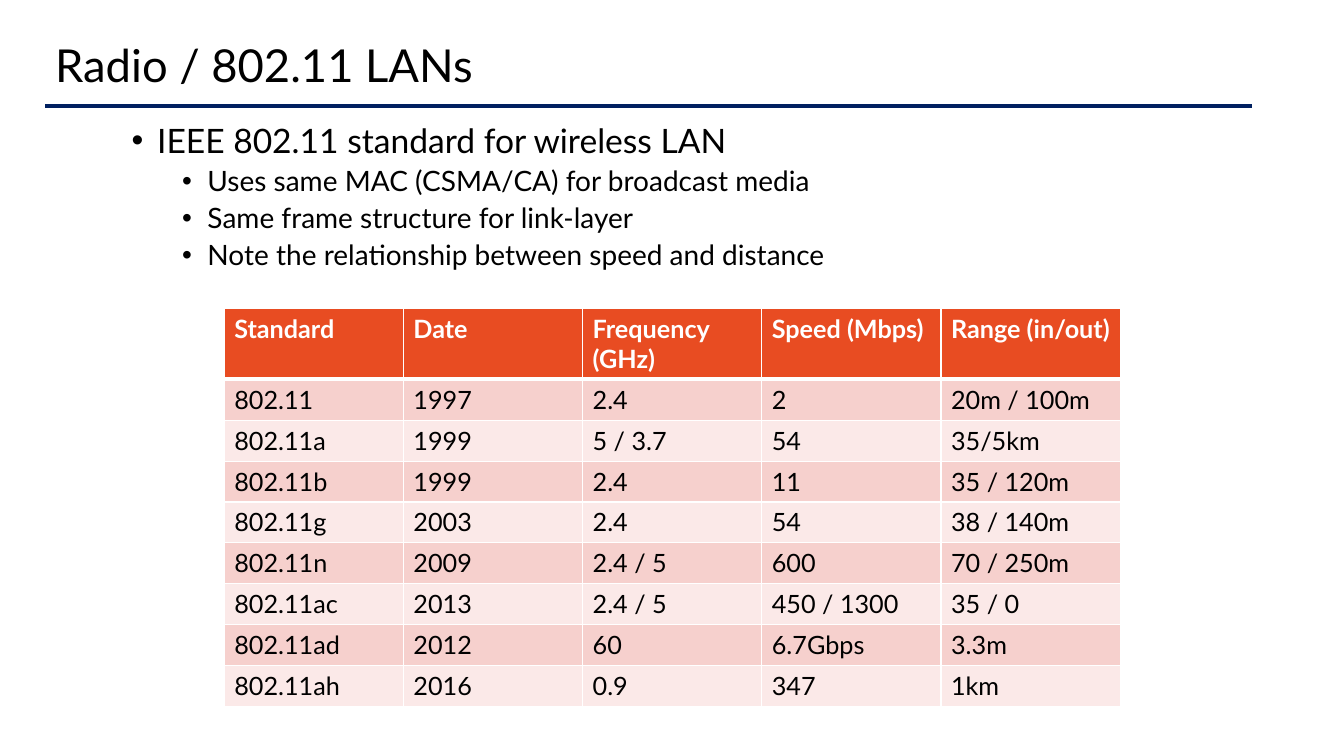
from lxml import etree
from pptx import Presentation
from pptx.dml.color import RGBColor
from pptx.enum.shapes import MSO_CONNECTOR
from pptx.enum.text import MSO_ANCHOR
from pptx.oxml.ns import qn
from pptx.util import Cm, Pt

STRAIGHT = MSO_CONNECTOR.STRAIGHT
MIDDLE = MSO_ANCHOR.MIDDLE
TOP = MSO_ANCHOR.TOP

COLORS = {
    "text": "000000",
    "rule": "002060",
    "header": "E84C22",
    "odd_row": "F6D0CD",
    "even_row": "FBE9E8",
    "white": "FFFFFF",
}

POINTS = [
    (0, "IEEE 802.11 standard for wireless LAN"),
    (1, "Uses same MAC (CSMA/CA) for broadcast media"),
    (1, "Same frame structure for link-layer"),
    (1, "Note the relationship between speed and distance"),
]

STANDARDS = [
    ("Standard", "Date", "Frequency (GHz)", "Speed (Mbps)", "Range (in/out)"),
    ("802.11", "1997", "2.4", "2", "20m / 100m"),
    ("802.11a", "1999", "5 / 3.7", "54", "35/5km"),
    ("802.11b", "1999", "2.4", "11", "35 / 120m"),
    ("802.11g", "2003", "2.4", "54", "38 / 140m"),
    ("802.11n", "2009", "2.4 / 5", "600", "70 / 250m"),
    ("802.11ac", "2013", "2.4 / 5", "450 / 1300", "35 / 0"),
    ("802.11ad", "2012", "60", "6.7Gbps", "3.3m"),
    ("802.11ah", "2016", "0.9", "347", "1km"),
]


class SlideBuilder:
    """Draws styled elements on the current slide."""

    def __init__(self, slide, font, colors):
        self.slide = slide
        self.font = font
        self.colors = colors

    def color(self, name):
        return RGBColor.from_string(self.colors[name])

    def style(self, paragraph, size, color="text", bold=False):
        for run in paragraph.runs:
            run.font.name = self.font
            run.font.size = Pt(size)
            run.font.bold = bold
            run.font.color.rgb = self.color(color)

    def text_frame(self, left, top, width, height, anchor):
        box = self.slide.shapes.add_textbox(Cm(left), Cm(top), Cm(width), Cm(height))
        frame = box.text_frame
        frame.word_wrap = True
        frame.vertical_anchor = anchor
        return frame

    def title(self, text, left, top, width, height):
        frame = self.text_frame(left, top, width, height, MIDDLE)
        frame.text = text
        frame.paragraphs[0].line_spacing = 0.9
        self.style(frame.paragraphs[0], 32.4)

    def rule(self, left, top, width):
        line = self.slide.shapes.add_connector(
            STRAIGHT, Cm(left), Cm(top), Cm(left + width), Cm(top))
        line.line.color.rgb = self.color("rule")
        line.line.width = Pt(2.5)
        etree.SubElement(line._element.spPr, qn("a:effectLst"))

    def bullets(self, points, left, top, width, height):
        frame = self.text_frame(left, top, width, height, TOP)
        frame.text = "\n".join(text for _, text in points)
        for index, (level, _) in enumerate(points):
            paragraph = frame.paragraphs[index]
            paragraph.level = level
            paragraph.line_spacing = 0.9
            if index:
                paragraph.space_before = Pt(5)
            properties = paragraph._p.get_or_add_pPr()
            properties.set("marL", str(Cm(0.64 + 1.27 * level)))
            properties.set("indent", str(-Cm(0.64)))
            etree.SubElement(properties, qn("a:buFont"), typeface="Arial")
            etree.SubElement(properties, qn("a:buChar"), char="•")
            self.style(paragraph, 24 - 4 * level)

    def borders(self, cell, **widths):
        properties = cell._tc.get_or_add_tcPr()
        for side in "LRTB":
            line = etree.SubElement(
                properties, qn(f"a:ln{side}"), w=str(Pt(widths.get(side, 1))))
            fill = etree.SubElement(line, qn("a:solidFill"))
            etree.SubElement(fill, qn("a:srgbClr"), val=self.colors["white"])

    def table(self, rows, left, top, width, header_height, row_height):
        height = header_height + row_height * (len(rows) - 1)
        grid = self.slide.shapes.add_table(
            len(rows), len(rows[0]), Cm(left), Cm(top), Cm(width), Cm(height)).table
        for column in grid.columns:
            column.width = Cm(width / len(rows[0]))
        for r, values in enumerate(rows):
            header = r == 0
            grid.rows[r].height = Cm(header_height if header else row_height)
            fill = "header" if header else "odd_row" if r % 2 else "even_row"
            for c, value in enumerate(values):
                cell = grid.cell(r, c)
                cell.text = value
                self.style(cell.text_frame.paragraphs[0], 18,
                           "white" if header else "text", header)
                self.borders(cell, T=3 if r == 1 else 1, B=3 if header else 1)
                cell.fill.solid()
                cell.fill.fore_color.rgb = self.color(fill)


def main():
    presentation = Presentation()
    presentation.slide_width = Cm(33.87)
    presentation.slide_height = Cm(19.05)
    slide = presentation.slides.add_slide(presentation.slide_layouts[6])
    builder = SlideBuilder(slide, "Lato", COLORS)
    builder.rule(1.14, 2.67, 30.4)
    builder.title("Radio / 802.11 LANs", 1.14, 1.02, 30.4, 1.37)
    builder.bullets(POINTS, 3.07, 3, 28.47, 14.15)
    builder.table(STANDARDS, 5.65, 7.78, 22.58, 1.76, 1.03)
    presentation.save("out.pptx")


if __name__ == "__main__":
    main()
